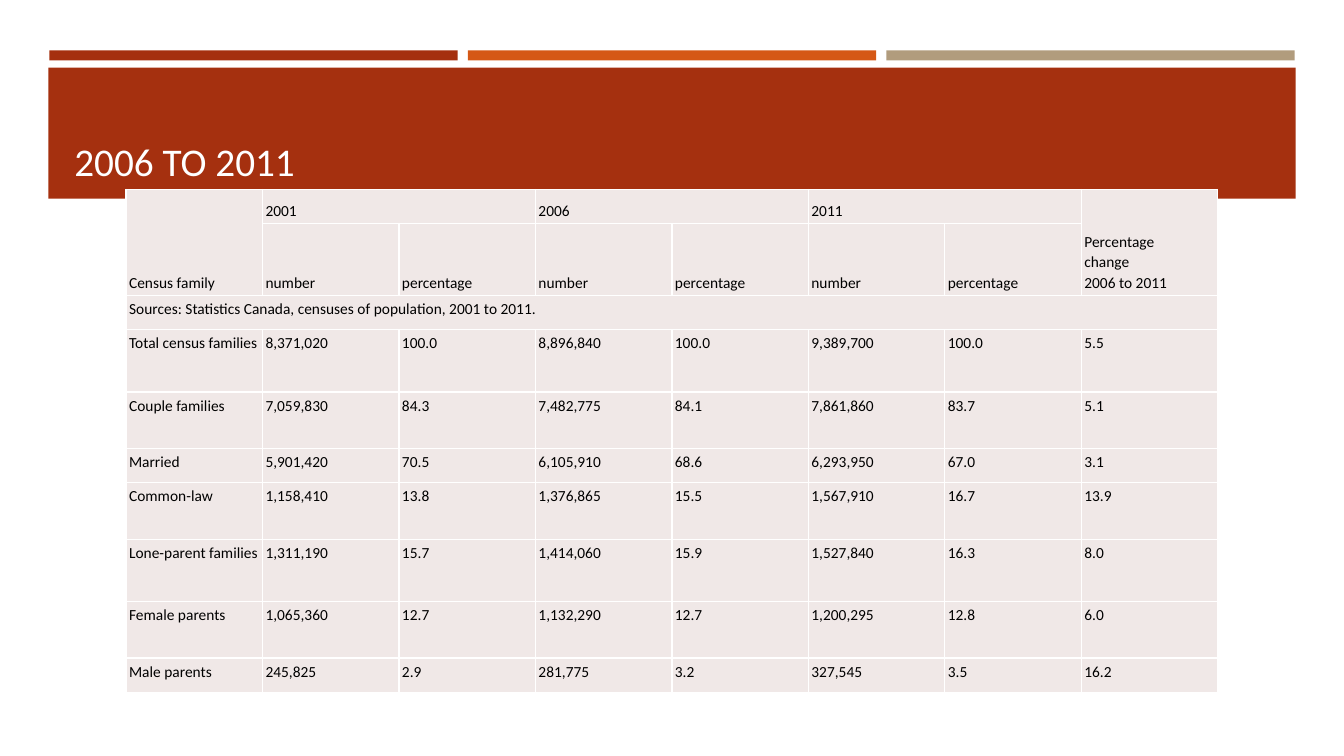
"""Build a slide with a table of census families, 2001 to 2011."""
from copy import deepcopy

from pptx import Presentation
from pptx.dml.color import RGBColor
from pptx.enum.shapes import MSO_SHAPE as Shape
from pptx.enum.text import MSO_ANCHOR as Anchor
from pptx.oxml import parse_xml
from pptx.oxml.ns import nsdecls, qn
from pptx.util import Inches, Pt

TITLE = "2006 TO 2011"
PAIR = ["number", "percentage"]
ROWS = [
    ["Census family", "2001", "", "2006", "", "2011", "",
     "Percentage\vchange\v2006 to 2011"],
    ["", *PAIR * 3, ""],
    ["Sources: Statistics Canada, censuses of population, 2001 to 2011."] + [""] * 7,
    ["Total census families", "8,371,020", "100.0", "8,896,840", "100.0",
     "9,389,700", "100.0", "5.5"],
    ["Couple families", "7,059,830", "84.3", "7,482,775", "84.1",
     "7,861,860", "83.7", "5.1"],
    ["Married", "5,901,420", "70.5", "6,105,910", "68.6",
     "6,293,950", "67.0", "3.1"],
    ["Common-law", "1,158,410", "13.8", "1,376,865", "15.5",
     "1,567,910", "16.7", "13.9"],
    ["Lone-parent families", "1,311,190", "15.7", "1,414,060", "15.9",
     "1,527,840", "16.3", "8.0"],
    ["Female parents", "1,065,360", "12.7", "1,132,290", "12.7",
     "1,200,295", "12.8", "6.0"],
    ["Male parents", "245,825", "2.9", "281,775", "3.2",
     "327,545", "3.5", "16.2"],
]
HEIGHTS = [0.34, 0.71, 0.34, 0.62, 0.56, 0.34, 0.56, 0.62, 0.56, 0.34]
MERGES = [(0, 0, 1, 0), (0, 1, 0, 2), (0, 3, 0, 4), (0, 5, 0, 6),
          (0, 7, 1, 7), (2, 0, 2, 7)]
HEAD_ROWS = 2

FONT = "Calibri"
RED = RGBColor(0xA5, 0x30, 0x0F)
ORANGE = RGBColor(0xD5, 0x58, 0x16)
TAN = RGBColor(0xB1, 0x9C, 0x7D)
PINK = RGBColor(0xF0, 0xE8, 0xE7)
WHITE = RGBColor(0xFF, 0xFF, 0xFF)
BLACK = RGBColor(0, 0, 0)


def add_bar(slide, left, top, width, height, color):
    bar = slide.shapes.add_shape(Shape.RECTANGLE, Inches(left), Inches(top),
                                 Inches(width), Inches(height))
    bar.shadow.inherit = False
    bar.fill.solid()
    bar.fill.fore_color.rgb = color
    bar.line.fill.background()


def style_text(frame, size, color):
    for para in frame.paragraphs:
        for run in para.runs:
            run.font.name = FONT
            run.font.size = Pt(size)
            run.font.color.rgb = color
            for gap in para._p.findall(qn("a:br")):
                if not len(gap):
                    gap.append(deepcopy(run._r.rPr))


def add_title(slide):
    box = slide.shapes.add_textbox(Inches(0.64), Inches(0.77),
                                   Inches(12.06), Inches(1.11))
    frame = box.text_frame
    frame.word_wrap = True
    frame.vertical_anchor = Anchor.BOTTOM
    frame.text = TITLE
    style_text(frame, 28, WHITE)


def style_cell(cell, anchor):
    cell.margin_left = cell.margin_right = Inches(0.03)
    cell.margin_top = cell.margin_bottom = Inches(0.03)
    cell.vertical_anchor = anchor
    props = cell._tc.get_or_add_tcPr()
    for side in "LRTB":
        props.append(parse_xml(
            f'<a:ln{side} {nsdecls("a")} w="{Pt(1)}"><a:solidFill>'
            f'<a:srgbClr val="{WHITE}"/></a:solidFill></a:ln{side}>'))
    cell.fill.solid()
    cell.fill.fore_color.rgb = PINK
    para = cell.text_frame.paragraphs[0]
    para.line_spacing = 1.07
    para.space_after = Pt(8)
    style_text(cell.text_frame, 11, BLACK)


def add_grid(slide):
    frame = slide.shapes.add_table(len(ROWS), len(ROWS[0]), Inches(1.25), Inches(1.88),
                                   Inches(10.83), Inches(sum(HEIGHTS)))
    table = frame.table
    for row, height in zip(table.rows, HEIGHTS):
        row.height = Inches(height)
    for r, texts in enumerate(ROWS):
        anchor = Anchor.BOTTOM if r < HEAD_ROWS else Anchor.TOP
        for c, text in enumerate(texts):
            cell = table.cell(r, c)
            if text:
                cell.text_frame.text = text
            style_cell(cell, anchor)
    for top, left, bottom, right in MERGES:
        table.cell(top, left).merge(table.cell(bottom, right))


def main():
    deck = Presentation()
    deck.slide_width, deck.slide_height = Inches(13.33), Inches(7.5)
    slide = deck.slides.add_slide(deck.slide_layouts[6])
    for i, color in enumerate([RED, ORANGE, TAN]):
        add_bar(slide, 0.49 + 4.15 * i, 0.5, 4.05, 0.1, color)
    add_bar(slide, 0.48, 0.67, 12.37, 1.3, RED)
    add_title(slide)
    add_grid(slide)
    deck.save("out.pptx")


if __name__ == "__main__":
    main()
